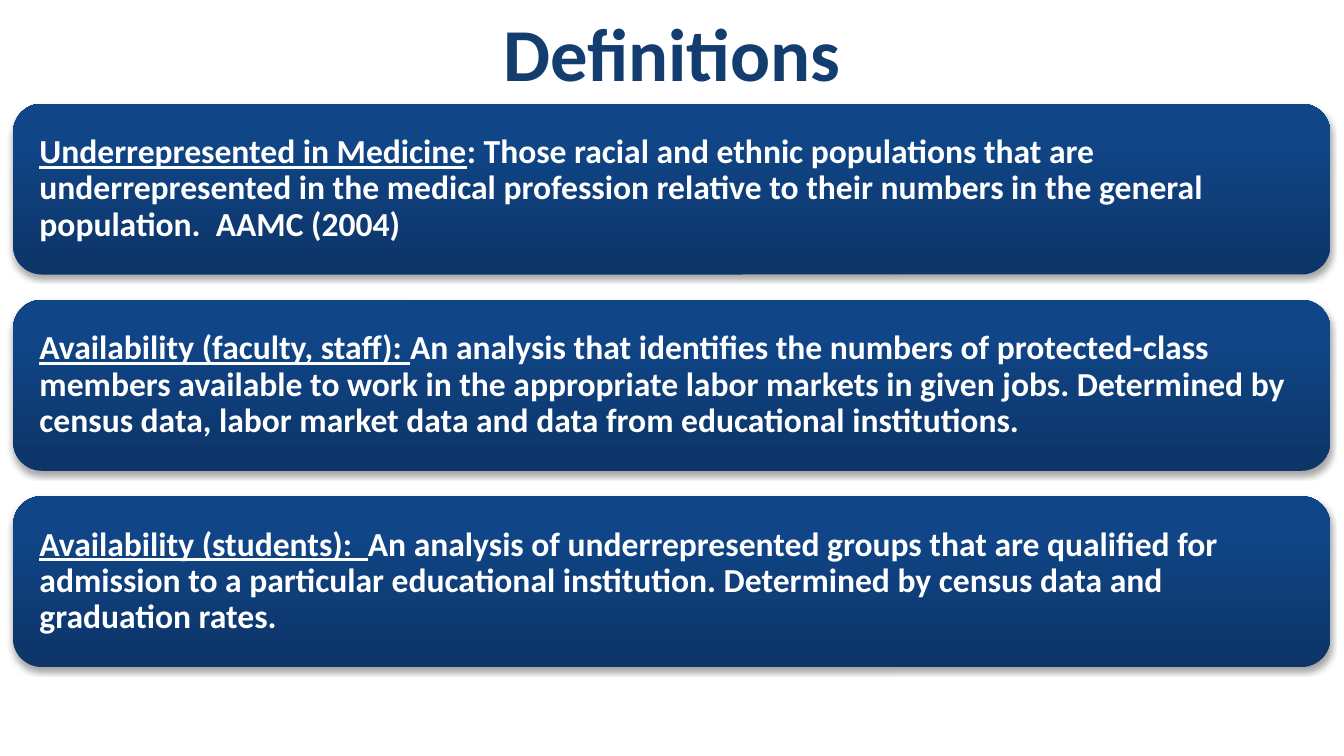
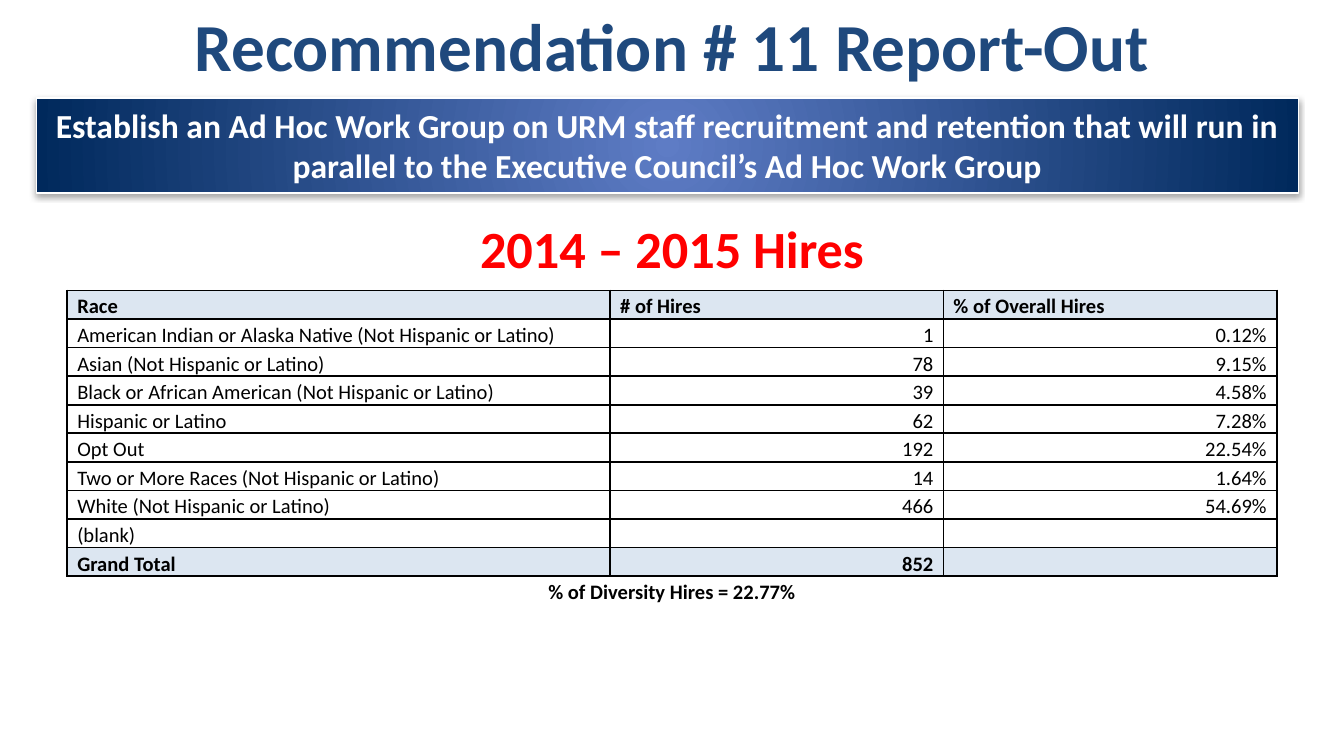
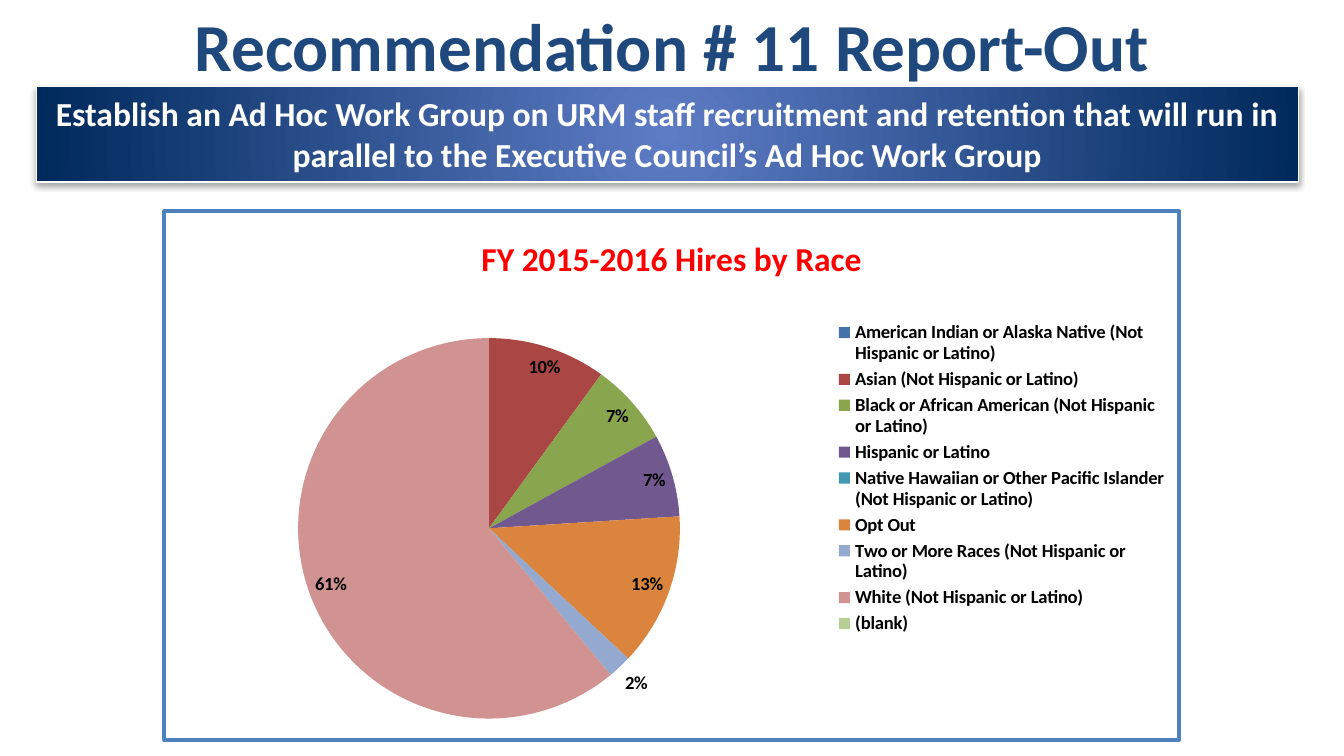
from pptx import Presentation
from pptx.chart.data import CategoryChartData
from pptx.dml.color import RGBColor
from pptx.enum.chart import XL_CHART_TYPE, XL_LABEL_POSITION, XL_LEGEND_POSITION
from pptx.enum.shapes import MSO_SHAPE
from pptx.enum.text import MSO_ANCHOR, PP_ALIGN
from pptx.oxml import parse_xml
from pptx.oxml.ns import nsdecls, qn
from pptx.util import Cm, Pt
from lxml import etree

CENTER, LEFT, RIGHT = PP_ALIGN.CENTER, PP_ALIGN.LEFT, PP_ALIGN.RIGHT
TOP, MIDDLE, BOTTOM = MSO_ANCHOR.TOP, MSO_ANCHOR.MIDDLE, MSO_ANCHOR.BOTTOM
ROUNDED, RECTANGLE = MSO_SHAPE.ROUNDED_RECTANGLE, MSO_SHAPE.RECTANGLE
PIE = XL_CHART_TYPE.PIE
BEST_FIT = XL_LABEL_POSITION.BEST_FIT
LEGEND_RIGHT = XL_LEGEND_POSITION.RIGHT

FONT = "Calibri"
COLORS = {
    "title": "1F497D",
    "accent": "FF0000",
    "text": "000000",
    "light": "FFFFFF",
    "band": "DCE6F1",
    "frame": "4F81BD",
}
SLICE_COLORS = ["4572A7", "AA4643", "89A54E", "71588F", "4198AF",
                "DB843D", "93A9CF", "D19392", "B9CD96"]

LINEAR = '<a:lin ang="{}" scaled="0"/>'
RADIAL = '<a:path path="circle"><a:fillToRect l="50000" t="50000" r="50000" b="50000"/></a:path>'
GRADIENTS = {
    "heading": ([(0, "0E2B4E"), (50, "143D6F"), (100, "184884")], LINEAR.format(180 * 60000)),
    "definition": ([(0, "0D3568"), (80, "104587"), (100, "0E458A")], LINEAR.format(270 * 60000)),
    "banner": ([(0, "5E7CC5"), (100, "00295C")], RADIAL),
}
for name, (stops, direction) in GRADIENTS.items():
    stop_xml = "".join(
        f'<a:gs pos="{position * 1000}"><a:srgbClr val="{color}"/></a:gs>' for position, color in stops)
    GRADIENTS[name] = f'<a:gradFill {nsdecls("a")}><a:gsLst>{stop_xml}</a:gsLst>{direction}</a:gradFill>'
SHADOW = (f'<a:outerShdw {nsdecls("a")} blurRad="40000" dist="23000" dir="5400000" rotWithShape="0">'
          '<a:srgbClr val="000000"><a:alpha val="35000"/></a:srgbClr></a:outerShdw>')


def write(paragraph, text, color, align=LEFT, **formats):
    paragraph.alignment = align
    run = paragraph.add_run()
    run.text = text
    for attribute, value in {"name": FONT, "bold": True, **formats}.items():
        setattr(run.font, attribute, value)
    run.font.color.rgb = RGBColor.from_string(COLORS[color])
    return run


def add_panel(slide, geometry, gradient, *box):
    panel = slide.shapes.add_shape(geometry, *[Cm(length) for length in box])
    panel.fill.background()
    properties = panel.fill._xPr
    properties.replace(properties.find(qn("a:noFill")), parse_xml(GRADIENTS[gradient]))
    panel.line.fill.background()
    panel.shadow.inherit = False
    properties.find(qn("a:effectLst")).append(parse_xml(SHADOW))
    panel.text_frame.word_wrap = True
    return panel


prs = Presentation()
prs.slide_width, prs.slide_height = Cm(25.4), Cm(14.29)
definitions_slide, hires_slide, race_slide = [
    prs.slides.add_slide(prs.slide_layouts[6]) for _ in range(3)]

REPORT = "Recommendation # 11 Report-Out"
titles = [
    (definitions_slide, "Definitions", 40, 0, 1.9),
    (hires_slide, REPORT, 36, -0.05, 2.49),
    (race_slide, REPORT, 36, -0.05, 2.49),
]
for slide, title, size, top, height in titles:
    title_frame = slide.shapes.add_textbox(0, Cm(top), Cm(25.4), Cm(height)).text_frame
    title_frame.word_wrap = True
    title_run = write(title_frame.paragraphs[0], title, "title", CENTER, size=Pt(size))
    if slide is definitions_slide:
        run_properties = title_run.font._rPr
        run_properties.replace(run_properties.find(qn("a:solidFill")), parse_xml(GRADIENTS["heading"]))

definitions = [
    ("Underrepresented in Medicine",
     ": Those racial and ethnic populations that are underrepresented in the medical profession "
     "relative to their numbers in the general population.  AAMC (2004)"),
    ("Availability (faculty, staff): ",
     "An analysis that identifies the numbers of protected-class members available to work in the "
     "appropriate labor markets in given jobs. Determined by census data, labor market data and "
     "data from educational institutions."),
    ("Availability (students):  ",
     "An analysis of underrepresented groups that are qualified for admission to a particular "
     "educational institution. Determined by census data and graduation rates."),
]
for index, (term, meaning) in enumerate(definitions):
    definition = add_panel(definitions_slide, ROUNDED, "definition",
                           0.25, 1.96 + index * 3.71, 24.89, 3.23)
    frame = definition.text_frame
    frame.vertical_anchor = MIDDLE
    for side in ("left", "right", "top", "bottom"):
        setattr(frame, f"margin_{side}", Cm(0.34))
    paragraph = frame.paragraphs[0]
    paragraph.line_spacing = 0.9
    write(paragraph, term, "light", size=Pt(18), underline=True)
    write(paragraph, meaning, "light", size=Pt(18))

for slide, top in [(hires_slide, 1.85), (race_slide, 1.64)]:
    banner = add_panel(slide, RECTANGLE, "banner", 0.69, top, 23.85, 1.8)
    banner.line.color.rgb = RGBColor.from_string(COLORS["light"])
    banner.line.width = Pt(0.75)
    banner.text_frame.vertical_anchor = TOP
    write(banner.text_frame.paragraphs[0],
          "Establish an Ad Hoc Work Group on URM staff recruitment and retention that will run in "
          "parallel to the Executive Council’s Ad Hoc Work Group", "light", CENTER, size=Pt(18))

period_frame = hires_slide.shapes.add_textbox(Cm(1.27), Cm(3.96), Cm(22.86), Cm(1.45)).text_frame
period_frame.word_wrap = True
write(period_frame.paragraphs[0], "2014 – 2015 Hires", "accent", CENTER, size=Pt(28))

hires = [
    ("Race", "# of Hires", "% of Overall Hires"),
    ("American Indian or Alaska Native (Not Hispanic or Latino)", "1", "0.12%"),
    ("Asian (Not Hispanic or Latino)", "78", "9.15%"),
    ("Black or African American (Not Hispanic or Latino)", "39", "4.58%"),
    ("Hispanic or Latino", "62", "7.28%"),
    ("Opt Out", "192", "22.54%"),
    ("Two or More Races (Not Hispanic or Latino)", "14", "1.64%"),
    ("White (Not Hispanic or Latino)", "466", "54.69%"),
    ("(blank)", "", ""),
    ("Grand Total", "852", ""),
    ("% of Diversity Hires = 22.77%", "", ""),
]
note_row = len(hires) - 1
total_row = note_row - 1
hires_table = hires_slide.shapes.add_table(
    len(hires), 3, Cm(1.27), Cm(5.49), Cm(22.86), Cm(0.54 * len(hires))).table
for column, width in zip(hires_table.columns, (10.26, 6.3, 6.3)):
    column.width = Cm(width)
for row_index, values in enumerate(hires):
    hires_table.rows[row_index].height = Cm(0.54)
    for column_index, value in enumerate(values):
        cell = hires_table.cell(row_index, column_index)
        cell_formats = {
            "margin_left": Cm(0.19), "margin_right": Cm(0.19), "margin_top": 0, "margin_bottom": 0,
            "vertical_anchor": BOTTOM if row_index == note_row else MIDDLE,
        }
        for attribute, setting in cell_formats.items():
            setattr(cell, attribute, setting)
        if row_index in (0, total_row):
            cell.fill.solid()
            cell.fill.fore_color.rgb = RGBColor.from_string(COLORS["band"])
        else:
            cell.fill.background()
        paragraph = cell.text_frame.paragraphs[0]
        paragraph.line_spacing = 1.15
        if value:
            align = CENTER if row_index == note_row else RIGHT if row_index and column_index else LEFT
            write(paragraph, value, "text", align, size=Pt(11),
                  bold=row_index in (0, total_row, note_row))
        else:
            etree.SubElement(paragraph._p, qn("a:endParaRPr"), sz="1100")
        for position, edge in enumerate(("lnL", "lnR", "lnT", "lnB")):
            if row_index < note_row or edge == "lnT":
                stroke = f'<a:solidFill><a:srgbClr val="{COLORS["text"]}"/></a:solidFill>'
            else:
                stroke = "<a:noFill/>"
            cell._tc.get_or_add_tcPr().insert(
                position, parse_xml(f'<a:{edge} {nsdecls("a")} w="12700">{stroke}</a:{edge}>'))
hires_table.cell(note_row, 0).merge(hires_table.cell(note_row, 2))

race_shares = [
    ("American Indian or Alaska Native (Not Hispanic or Latino)", 0),
    ("Asian (Not Hispanic or Latino)", 10),
    ("Black or African American (Not Hispanic or Latino)", 7),
    ("Hispanic or Latino", 7),
    ("Native Hawaiian or Other Pacific Islander (Not Hispanic or Latino)", 0),
    ("Opt Out", 13),
    ("Two or More Races (Not Hispanic or Latino)", 2),
    ("White (Not Hispanic or Latino)", 61),
    ("(blank)", None),
]
share_data = CategoryChartData()
share_data.categories = [race for race, _ in race_shares]
share_data.add_series("Series 1", [share for _, share in race_shares])
race_chart = race_slide.shapes.add_chart(
    PIE, Cm(3.07), Cm(3.96), Cm(19.25), Cm(10.06), share_data).chart
for attribute, setting in {"name": FONT, "size": Pt(10), "bold": True}.items():
    setattr(race_chart.font, attribute, setting)
race_chart.font.color.rgb = RGBColor.from_string(COLORS["text"])
race_chart.has_title = True
write(race_chart.chart_title.text_frame.paragraphs[0], "FY 2015-2016 Hires by Race",
      "accent", CENTER, size=Pt(18))

race_chart.has_legend = True
race_chart.legend.position = LEGEND_RIGHT
race_chart.legend.include_in_layout = False

pie = race_chart.plots[0]
pie.vary_by_categories = True
pie.has_data_labels = True
label_formats = {"show_percentage": True, "show_value": False, "number_format": "0%",
                 "number_format_is_linked": False, "position": BEST_FIT}
for attribute, setting in label_formats.items():
    setattr(pie.data_labels, attribute, setting)
for index, color in enumerate(SLICE_COLORS):
    slice_fill = pie.series[0].points[index].format.fill
    slice_fill.solid()
    slice_fill.fore_color.rgb = RGBColor.from_string(color)

chart_xml = race_chart._chartSpace.find(qn("c:chart"))
layouts = [
    ("c:plotArea", 0, '<c:layoutTarget val="inner"/>', (0.13, 0.24, 0.38, 0.72)),
    ("c:legend", 1, "", (0.66, 0.2, 0.33, 0.61)),
]
for tag, position, target, box in layouts:
    part = chart_xml.find(qn(tag))
    for old_layout in part.findall(qn("c:layout")):
        part.remove(old_layout)
    modes = '<c:xMode val="edge"/><c:yMode val="edge"/>'
    sizes = "".join(f'<c:{side} val="{length}"/>' for side, length in zip("xywh", box))
    part.insert(position, parse_xml(
        f'<c:layout {nsdecls("c")}><c:manualLayout>{target}{modes}{sizes}</c:manualLayout></c:layout>'))
chart_xml.addnext(parse_xml(
    f'<c:spPr {nsdecls("c", "a")}><a:solidFill><a:srgbClr val="{COLORS["light"]}"/></a:solidFill>'
    f'<a:ln w="25400"><a:solidFill><a:srgbClr val="{COLORS["frame"]}"/></a:solidFill></a:ln></c:spPr>'))

prs.save("out.pptx")
